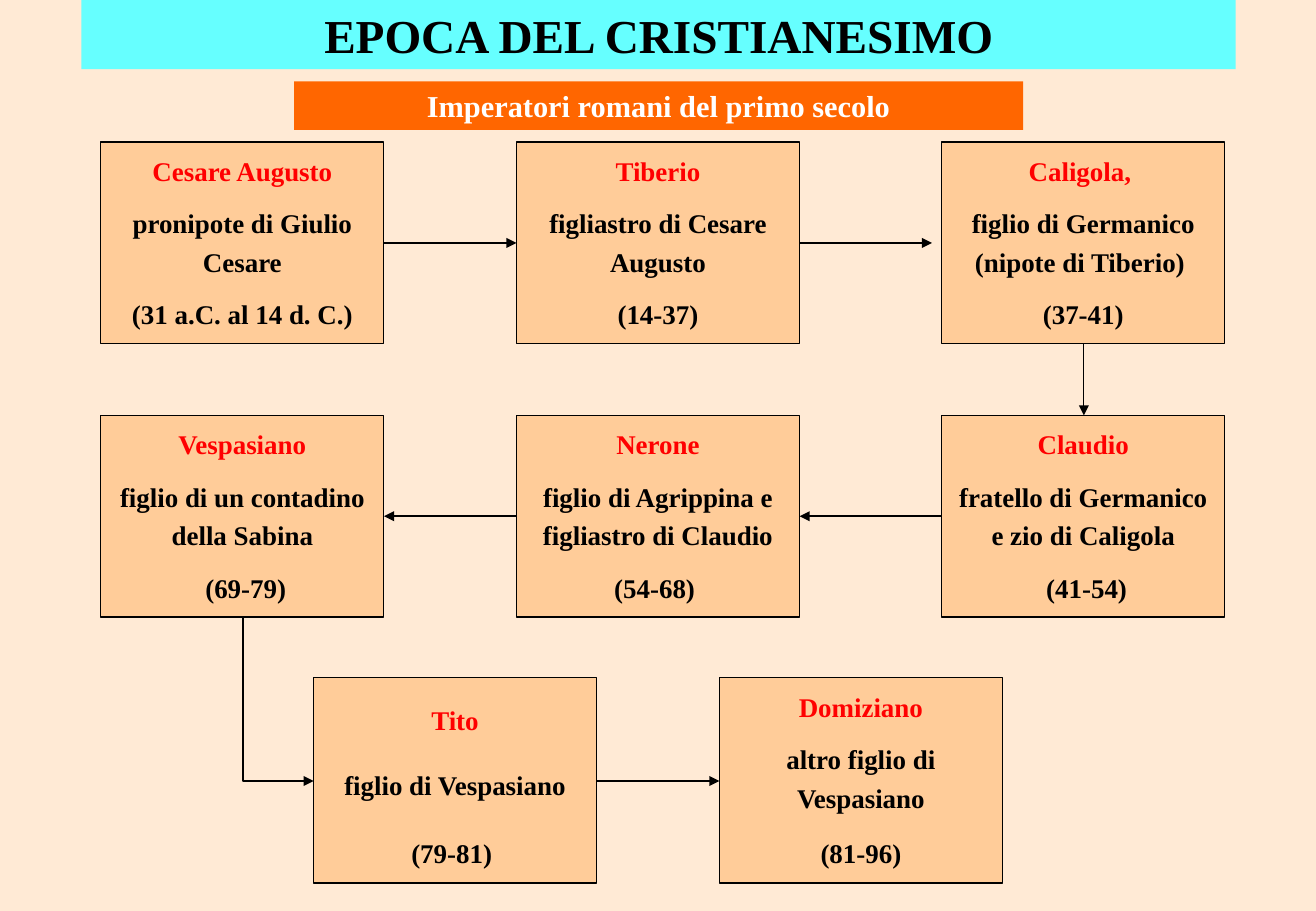
from dataclasses import dataclass
from typing import Any

from lxml.etree import SubElement as Sub
from pptx import Presentation
from pptx.dml.color import RGBColor as Rgb
from pptx.enum.shapes import MSO_CONNECTOR as Conn, MSO_SHAPE as Form
from pptx.enum.text import MSO_ANCHOR as Anchor, MSO_AUTO_SIZE as Auto, PP_ALIGN as Align
from pptx.oxml.ns import qn
from pptx.util import Inches, Pt

HUES = {
    "page": "FFEAD5", "card": "FFCC99", "name": "FF0000", "ink": "000000",
    "banner": "66FFFF", "strip": "FF6600", "light": "FFFFFF",
}
FRAME = {"word_wrap": True, "auto_size": Auto.NONE, "vertical_anchor": Anchor.TOP}
FONT = {"name": "Times New Roman", "bold": True}
WIDE = 2.33
COLS = (0.83, 4.25, 7.75)
ROWS = (1.17, 3.42, 5.58)
LOW = (2.58, 5.92)
HIGH = (1.66, 1.66, 1.69)
MIDS = (2, 4.25, 6.43)


@dataclass(frozen=True)
class Line:
    text: str
    size: float
    hue: str = "ink"
    pitch: float = 1.0


@dataclass(frozen=True)
class Box:
    left: float
    top: float
    width: float
    height: float
    fill: str
    lines: tuple[Line, ...]
    edge: bool = False


@dataclass(frozen=True)
class Ruler:
    left: float
    row: int
    name: str
    origin: str
    reign: str
    pitch: tuple[float, float, float] = (1.2, 1.2, 1.2)


@dataclass(frozen=True)
class Arrow:
    start: tuple[float, float]
    end: tuple[float, float]
    weight: float = 1
    bent: bool = False


RULERS = (
    Ruler(COLS[0], 0, "Cesare Augusto", "pronipote di Giulio Cesare", "(31 a.C. al 14 d. C.)"),
    Ruler(COLS[1], 0, "Tiberio", "figliastro di Cesare Augusto", "(14-37)"),
    Ruler(COLS[2], 0, "Caligola, ", "figlio di Germanico (nipote di Tiberio) ", "(37-41)"),
    Ruler(COLS[2], 1, "Claudio", "fratello di Germanico e zio di Caligola", " (41-54)"),
    Ruler(COLS[1], 1, "Nerone", "figlio di Agrippina e figliastro di Claudio", "(54-68) "),
    Ruler(COLS[0], 1, "Vespasiano", "figlio di un contadino della Sabina", " (69-79)"),
    Ruler(LOW[0], 2, "Tito", "figlio di Vespasiano", "(79-81) ", (1.6, 1.6, 1.7)),
    Ruler(LOW[1], 2, "Domiziano", "altro figlio di Vespasiano", "(81-96)", (1.2, 1.2, 1.3)),
)
ARROWS = (
    Arrow((COLS[0] + WIDE, MIDS[0]), (COLS[1], MIDS[0])),
    Arrow((COLS[1] + WIDE, MIDS[0]), (7.67, MIDS[0])),
    Arrow((8.92, ROWS[0] + HIGH[0]), (8.92, ROWS[1]), 0.75),
    Arrow((COLS[2], MIDS[1]), (COLS[1] + WIDE, MIDS[1])),
    Arrow((COLS[1], MIDS[1]), (COLS[0] + WIDE, MIDS[1])),
    Arrow((2, ROWS[1] + HIGH[1]), (LOW[0], MIDS[2]), bent=True),
    Arrow((LOW[0] + WIDE, MIDS[2]), (LOW[1], MIDS[2])),
)
HEADS = (
    Box(2.42, 0.67, 6, 0.4, "strip", (Line("Imperatori romani del primo secolo", 18, "light"),)),
    Box(0.67, 0, 9.5, 0.57, "banner", (Line("EPOCA DEL CRISTIANESIMO", 28),)),
)


def tint(hue: str) -> Rgb:
    return Rgb.from_string(HUES[hue])


def apply(item: Any, look: dict[str, Any]) -> None:
    for key, value in look.items():
        setattr(item, key, value)


def paint(fill: Any, hue: str) -> None:
    fill.solid()
    fill.fore_color.rgb = tint(hue)


def draw_box(slide: Any, box: Box) -> None:
    place = map(Inches, (box.left, box.top, box.width, box.height))
    shape = slide.shapes.add_shape(Form.RECTANGLE, *place)
    shape.shadow.inherit = False
    paint(shape.fill, box.fill)
    if box.edge:
        paint(shape.line.fill, "ink")
        shape.line.width = Pt(0.75)
    else:
        shape.line.fill.background()
    frame = shape.text_frame
    apply(frame, FRAME)
    for num, line in enumerate(box.lines):
        para = frame.add_paragraph() if num else frame.paragraphs[0]
        apply(para, {
            "alignment": Align.CENTER,
            "line_spacing": line.pitch,
            "space_before": Pt(line.size / 2),
        })
        run = para.add_run()
        run.text = line.text
        apply(run.font, FONT | {"size": Pt(line.size)})
        run.font.color.rgb = tint(line.hue)


def draw_ruler(slide: Any, ruler: Ruler) -> None:
    texts = (ruler.name, ruler.origin, ruler.reign)
    hues = ("name", "ink", "ink")
    lines = tuple(Line(text, 16, hue, pitch)
                  for text, hue, pitch in zip(texts, hues, ruler.pitch))
    draw_box(slide, Box(ruler.left, ROWS[ruler.row], WIDE, HIGH[ruler.row], "card", lines, True))


def draw_arrow(slide: Any, arrow: Arrow) -> None:
    (x1, y1), (x2, y2) = arrow.start, arrow.end
    kind = Conn.STRAIGHT
    if arrow.bent:
        kind = Conn.ELBOW
        mid_x, mid_y = (x1 + x2) / 2, (y1 + y2) / 2
        half_w, half_h = (y2 - y1) / 2, (x2 - x1) / 2
        x1, x2 = mid_x + half_w, mid_x - half_w
        y1, y2 = mid_y - half_h, mid_y + half_h
    link = slide.shapes.add_connector(kind, *map(Inches, (x1, y1, x2, y2)))
    paint(link.line.fill, "ink")
    link.line.width = Pt(arrow.weight)
    props = link.element.spPr
    if arrow.bent:
        props.find(qn("a:xfrm")).set("rot", "16200000")
        props.find(qn("a:prstGeom")).set("prst", "bentConnector2")
    Sub(props.find(qn("a:ln")), qn("a:tailEnd"), type="triangle")
    Sub(props, qn("a:effectLst"))


def main() -> None:
    deck = Presentation()
    apply(deck, {"slide_width": Inches(10.83), "slide_height": Inches(7.5)})
    slide = deck.slides.add_slide(deck.slide_layouts[6])
    paint(slide.background.fill, "page")
    for ruler in RULERS:
        draw_ruler(slide, ruler)
    for arrow in ARROWS:
        draw_arrow(slide, arrow)
    for head in HEADS:
        draw_box(slide, head)
    deck.save("out.pptx")


if __name__ == "__main__":
    main()
